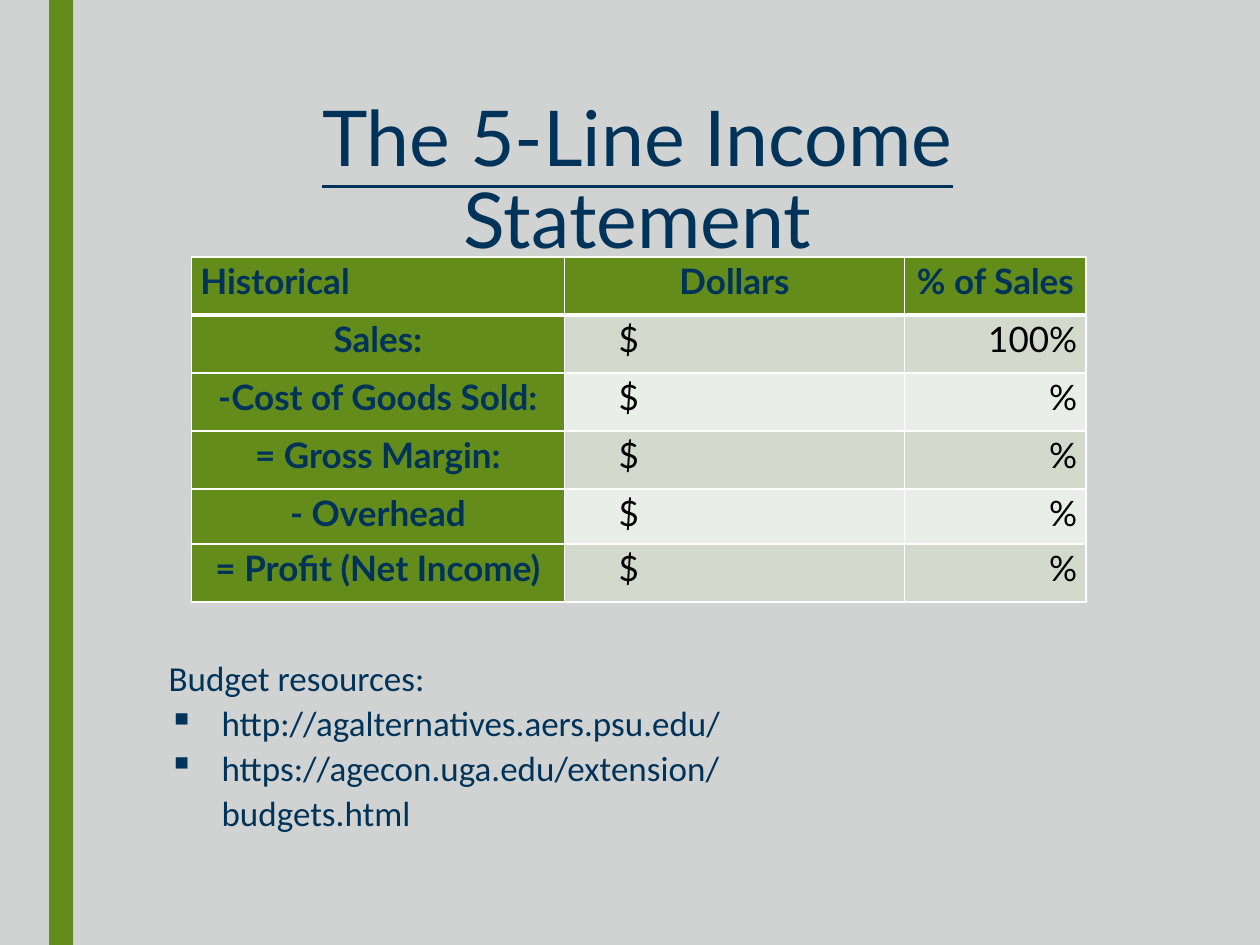
from dataclasses import dataclass

from lxml import etree
from pptx import Presentation
from pptx.dml.color import RGBColor
from pptx.enum.shapes import MSO_SHAPE
from pptx.enum.text import MSO_ANCHOR, PP_ALIGN
from pptx.oxml.ns import qn
from pptx.util import Inches, Pt

LEFT, CENTER, RIGHT = PP_ALIGN.LEFT, PP_ALIGN.CENTER, PP_ALIGN.RIGHT
TOP = MSO_ANCHOR.TOP
RECTANGLE = MSO_SHAPE.RECTANGLE


@dataclass(frozen=True)
class Theme:
    background: str = "D1D3D3"
    green: str = "648C1A"
    navy: str = "003359"
    black: str = "000000"
    white: str = "FFFFFF"
    bands: tuple = ("EAEEE8", "D3DACD")
    heading_font: str = "Lato"
    body_font: str = "Calibri"
    title_size: int = 44
    text_size: int = 20
    title_spacing: float = 0.89
    text_spacing: float = 1.07


THEME = Theme()

COLUMN_WIDTHS = (2.96, 2.7, 1.44)
ROW_HEIGHTS = (0.46, 0.46, 0.46, 0.46, 0.44, 0.46)
STATEMENT = (
    ("Historical", "Dollars", "% of Sales"),
    ("Sales:", "$", "100%"),
    ("-Cost of Goods Sold:", "$", "%"),
    ("= Gross Margin:", "$", "%"),
    ("- Overhead", "$", "%"),
    ("= Profit (Net Income)", "$", "%"),
)
RESOURCES = (
    "http://agalternatives.aers.psu.edu/",
    "https://agecon.uga.edu/extension/budgets.html",
)


def style_paragraph(paragraph, font, size, color, align=LEFT,
                    spacing=THEME.text_spacing, bold=False, underline=False):
    paragraph.alignment = align
    paragraph.line_spacing = spacing
    for run in paragraph.runs:
        run.font.name = font
        run.font.size = Pt(size)
        run.font.color.rgb = RGBColor.from_string(color)
        run.font.bold = bold
        run.font.underline = underline


def indent(paragraph, left, first=0):
    properties = paragraph._p.get_or_add_pPr()
    properties.set("marL", str(Inches(left)))
    properties.set("indent", str(Inches(first)))
    return properties


def add_bullet(paragraph):
    properties = indent(paragraph, 0.42, -0.42)
    etree.SubElement(properties, qn("a:buChar")).set("char", "▪")


def add_text_frame(slide, left, top, width, height):
    frame = slide.shapes.add_textbox(
        Inches(left), Inches(top), Inches(width), Inches(height)).text_frame
    frame.word_wrap = True
    frame.vertical_anchor = TOP
    return frame


def add_side_bar(slide):
    bar = slide.shapes.add_shape(
        RECTANGLE, Inches(0.39), 0, Inches(0.19), Inches(7.5))
    bar.shadow.inherit = False
    bar.fill.solid()
    bar.fill.fore_color.rgb = RGBColor.from_string(THEME.green)
    bar.line.fill.background()


def add_title(slide):
    frame = add_text_frame(slide, 1.12, 0.75, 7.88, 1.62)
    frame.text = "The 5-Line Income Statement"
    style_paragraph(frame.paragraphs[0], THEME.heading_font, THEME.title_size,
                    THEME.navy, CENTER, THEME.title_spacing, underline=True)


def add_resources(slide):
    frame = add_text_frame(slide, 1.24, 5.14, 5.78, 1.63)
    frame.text = "\n".join(("Budget resources:",) + RESOURCES)
    for paragraph in frame.paragraphs[1:]:
        add_bullet(paragraph)
    for paragraph in frame.paragraphs:
        style_paragraph(paragraph, THEME.body_font, THEME.text_size, THEME.navy)


def set_borders(cell, row):
    widths = {"L": 1, "R": 1, "T": 3 if row == 1 else 1, "B": 3 if row == 0 else 1}
    properties = cell._tc.get_or_add_tcPr()
    for position, (side, width) in enumerate(widths.items()):
        line = etree.Element(qn(f"a:ln{side}"), w=str(Pt(width)))
        fill = etree.SubElement(line, qn("a:solidFill"))
        etree.SubElement(fill, qn("a:srgbClr")).set("val", THEME.white)
        properties.insert(position, line)


def fill_cell(cell, text, row, column):
    is_label = row == 0 or column == 0
    cell.fill.solid()
    cell.fill.fore_color.rgb = RGBColor.from_string(
        THEME.green if is_label else THEME.bands[row % 2])
    cell.margin_left = cell.margin_right = Inches(0.07)
    cell.margin_top = cell.margin_bottom = 0
    cell.vertical_anchor = TOP
    set_borders(cell, row)

    if is_label:
        align = LEFT if row == column == 0 else CENTER
    else:
        align = LEFT if column == 1 else RIGHT
    cell.text_frame.text = text
    paragraph = cell.text_frame.paragraphs[0]
    style_paragraph(paragraph, THEME.heading_font, THEME.text_size,
                    THEME.navy if is_label else THEME.black, align, bold=is_label)
    if column == 1 and not is_label:
        indent(paragraph, 0.36)


def add_statement(slide):
    table = slide.shapes.add_table(
        len(ROW_HEIGHTS), len(COLUMN_WIDTHS), Inches(1.52), Inches(2.04),
        Inches(sum(COLUMN_WIDTHS)), Inches(sum(ROW_HEIGHTS))).table
    for column, width in zip(table.columns, COLUMN_WIDTHS):
        column.width = Inches(width)
    for row, height in zip(table.rows, ROW_HEIGHTS):
        row.height = Inches(height)
    for row, texts in enumerate(STATEMENT):
        for column, text in enumerate(texts):
            fill_cell(table.cell(row, column), text, row, column)


def main():
    presentation = Presentation()
    presentation.slide_width = Inches(10)
    presentation.slide_height = Inches(7.5)
    slide = presentation.slides.add_slide(presentation.slide_layouts[6])
    slide.background.fill.solid()
    slide.background.fill.fore_color.rgb = RGBColor.from_string(THEME.background)
    add_side_bar(slide)
    add_title(slide)
    add_resources(slide)
    add_statement(slide)
    presentation.save("out.pptx")


if __name__ == "__main__":
    main()
